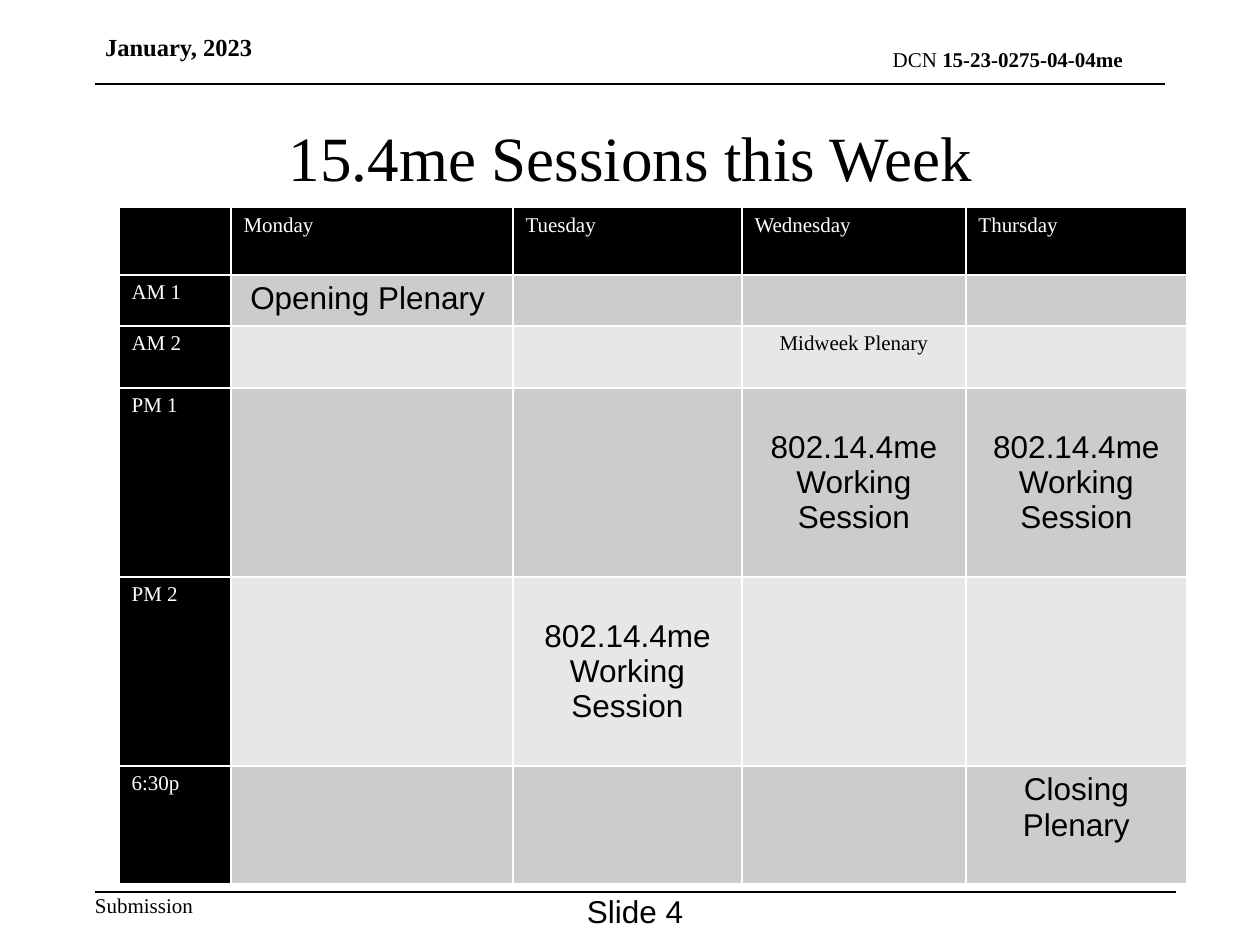
from lxml import etree
from pptx import Presentation
from pptx import util as u
from pptx.dml.color import RGBColor
from pptx.enum import shapes, text
from pptx.oxml.ns import qn

SCALE = 914400 / 126
COLORS = {"ink": "000000", "paper": "FFFFFF", "band": "CCCCCC", "light": "E7E7E7"}
SERIF, SANS = "Times New Roman", "Arial"
LEFT, CENTER, RIGHT = text.PP_ALIGN.LEFT, text.PP_ALIGN.CENTER, text.PP_ALIGN.RIGHT
TOP, MIDDLE, BOTTOM = text.MSO_ANCHOR.TOP, text.MSO_ANCHOR.MIDDLE, text.MSO_ANCHOR.BOTTOM

COLUMN_WIDTHS = [112, 282, 229, 224, 221]
ROW_HEIGHTS = [68, 51, 62, 189, 189, 118]
DAYS = ["", "Monday", "Tuesday", "Wednesday", "Thursday"]
SLOTS = ["AM 1", "AM 2", "PM 1", "PM 2", "6:30p"]
WORKING = "802.14.4me Working Session"
# (row, column): (wording, font, size, anchor)
SESSIONS = {
    (1, 1): ("Opening Plenary ", SANS, 18, TOP),
    (2, 3): ("Midweek Plenary", SERIF, 12, TOP),
    (3, 3): (WORKING, SANS, 18, MIDDLE),
    (3, 4): (WORKING, SANS, 18, MIDDLE),
    (4, 2): (WORKING, SANS, 18, MIDDLE),
    (5, 4): ("Closing Plenary", SANS, 18, TOP),
}


def px(length):
    return u.Emu(round(length * SCALE))


def color(name):
    return RGBColor.from_string(COLORS[name])


def style(para, font, size, ink="ink", align=LEFT, bold=None):
    para.alignment = align
    para.font.name = font
    para.font.size = u.Pt(size)
    para.font.color.rgb = color(ink)
    para.font.bold = bold


def add_text(page, place, spans, size, font=SERIF, align=LEFT, anchor=TOP):
    """Add a one-paragraph box; spans are (wording, bold) pairs."""
    box = page.shapes.add_textbox(*map(px, place))
    frame = box.text_frame
    frame.word_wrap = True
    frame.vertical_anchor = anchor
    frame.margin_left = frame.margin_right = frame.margin_top = frame.margin_bottom = 0
    para = frame.paragraphs[0]
    style(para, font, size, align=align)
    for wording, bold in spans:
        span = para.add_run()
        span.text = wording
        span.font.bold = bold


def add_rule(page, left, right, y):
    rule = page.shapes.add_connector(
        shapes.MSO_CONNECTOR.STRAIGHT, px(left), px(y), px(right), px(y))
    rule.line.color.rgb = color("ink")
    rule.line.width = u.Pt(1)
    etree.SubElement(rule._element.spPr, qn("a:effectLst"))


def add_borders(cell):
    properties = cell._tc.get_or_add_tcPr()
    for side in "LRTB":
        line = etree.SubElement(properties, qn(f"a:ln{side}"), w=str(u.Pt(1)))
        fill = etree.SubElement(line, qn("a:solidFill"))
        etree.SubElement(fill, qn("a:srgbClr"), val=COLORS["paper"])


def fill_cell(cell, row, column):
    heading = row == 0 or column == 0
    add_borders(cell)
    cell.fill.solid()
    cell.fill.fore_color.rgb = color("ink" if heading else "band" if row % 2 else "light")
    if heading:
        wording = DAYS[column] if row == 0 else SLOTS[row - 1]
        font, size, anchor, ink, align = SERIF, 12, TOP, "paper", LEFT
    else:
        wording, font, size, anchor = SESSIONS.get((row, column), ("", SERIF, 12, TOP))
        ink, align = "ink", CENTER
    cell.text = wording
    cell.vertical_anchor = anchor
    style(cell.text_frame.paragraphs[0], font, size, ink, align, bold=False)


def add_schedule(page, left, top):
    table = page.shapes.add_table(
        len(ROW_HEIGHTS), len(COLUMN_WIDTHS), px(left), px(top),
        px(sum(COLUMN_WIDTHS)), px(sum(ROW_HEIGHTS))).table
    table.first_row = table.horz_banding = False
    for column, width in zip(table.columns, COLUMN_WIDTHS):
        column.width = px(width)
    for row, height in enumerate(ROW_HEIGHTS):
        table.rows[row].height = px(height)
        for column in range(len(COLUMN_WIDTHS)):
            fill_cell(table.cell(row, column), row, column)


def main():
    deck = Presentation()
    deck.slide_width, deck.slide_height = px(1260), px(945)
    page = deck.slides.add_slide(deck.slide_layouts[6])

    add_text(page, (105, 31, 220, 30), [("January, 2023", True)], 14, anchor=BOTTOM)
    add_text(page, (472, 47, 651, 25), [("DCN ", False), ("15-23-0275-04-04me", True)],
             12, align=RIGHT, anchor=BOTTOM)
    add_rule(page, 95, 1165, 84)

    add_text(page, (158, 95, 945, 99), [("15.4me Sessions this Week", False)],
             36, align=CENTER, anchor=BOTTOM)
    add_schedule(page, 119, 207)

    add_rule(page, 95, 1176, 892)
    add_text(page, (95, 893, 120, 25), [("Submission", False)], 12)
    add_text(page, (565, 892, 140, 36), [("Slide 4", False)], 18, SANS, CENTER)
    deck.save("out.pptx")


if __name__ == "__main__":
    main()
